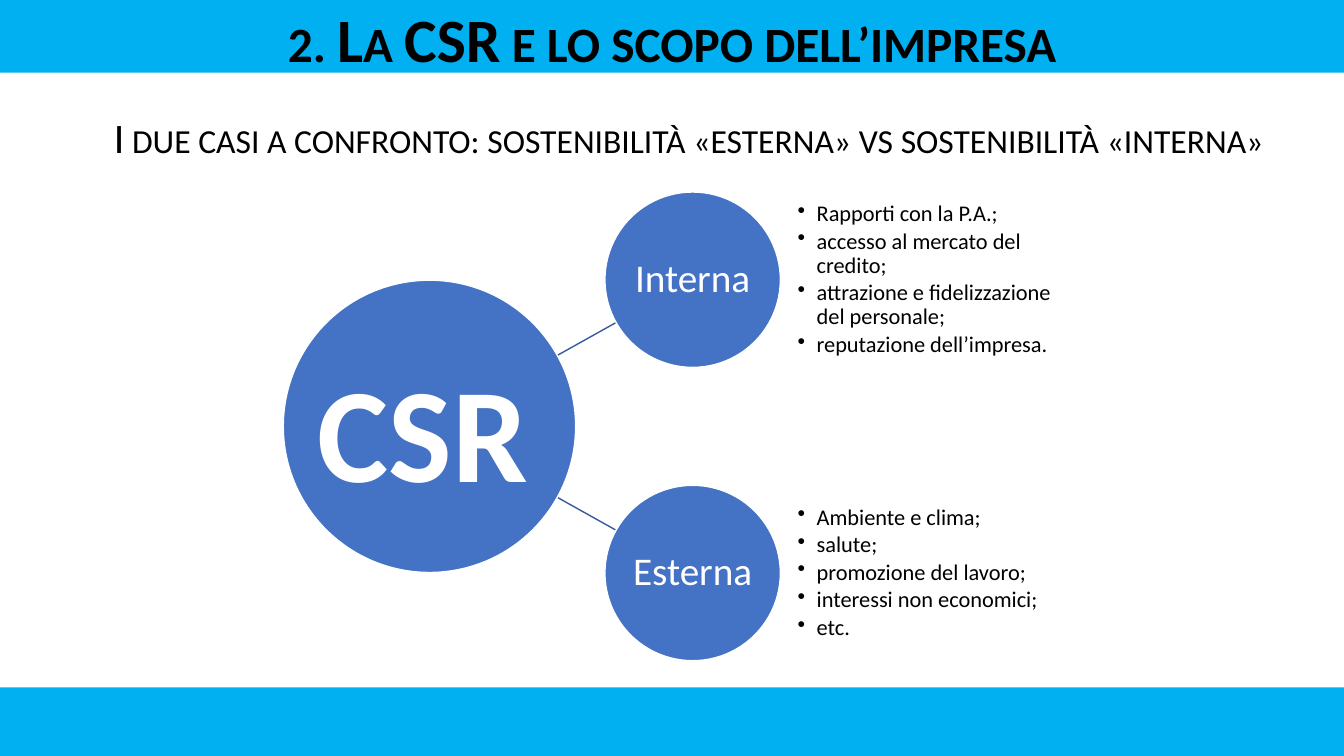
from lxml import etree
from pptx import Presentation
from pptx.dml.color import RGBColor
from pptx.enum.shapes import MSO_CONNECTOR as Connector, MSO_SHAPE as Shape
from pptx.enum.text import MSO_ANCHOR as Anchor, PP_ALIGN as Align
from pptx.oxml.ns import qn
from pptx.util import Inches, Pt

# Content
TITLE = "2. La CSR e lo scopo dell’impresa"
SUBTITLE = "I due casi a confronto: sostenibilità «esterna» vs sostenibilità «interna»"
HUB = "CSR"
BRANCHES = [
    ("Interna", -1, [
        "Rapporti con la P.A.;",
        "accesso al mercato del credito;",
        "attrazione e fidelizzazione del personale;",
        "reputazione dell’impresa.",
    ]),
    ("Esterna", 1, [
        "Ambiente e clima;",
        "salute;",
        "promozione del lavoro;",
        "interessi non economici;",
        "etc.",
    ]),
]

# Layout in inches
WIDTH, HEIGHT = 13.33, 7.5
BANDS = [(6.82, 0.68), (0, 0.72)]
HUB_X, HUB_Y, HUB_SIZE = 4.26, 4.23, 2.9
NODE_SIZE = HUB_SIZE * 0.6
NODE_X, NODE_STEP = 6.87, 1.455
LIST_LEFT, LIST_WIDTH = 7.91, NODE_SIZE * 1.5
LINK_START, LINK_END = (5.27, 0.56), (6.11, 1.03)

SKY, BLUE, LINK = "00B0F0", "4472C4", "365B9D"
WHITE, BLACK = "FFFFFF", "000000"


def color(value):
    return RGBColor.from_string(value)


def add_shape(kind, left, top, width, height, fill, line=None):
    shape = slide.shapes.add_shape(
        kind, Inches(left), Inches(top), Inches(width), Inches(height))
    shape.shadow.inherit = False
    shape.fill.solid()
    shape.fill.fore_color.rgb = color(fill)
    if line:
        shape.line.color.rgb = color(line)
        shape.line.width = Pt(1)
    else:
        shape.line.fill.background()
    return shape


def add_circle(x, y, size):
    return add_shape(Shape.OVAL, x - size / 2, y - size / 2, size, size, BLUE, WHITE)


def add_box(left, top, width, height):
    box = slide.shapes.add_textbox(
        Inches(left), Inches(top), Inches(width), Inches(height))
    box.text_frame.word_wrap = True
    return box.text_frame


def set_margins(frame, across, down):
    frame.margin_left = frame.margin_right = Inches(across)
    frame.margin_top = frame.margin_bottom = Inches(down)


def write(frame, text, size, ink, bold=False, small_caps=False, align=Align.CENTER):
    frame.text = text
    for paragraph in frame.paragraphs:
        paragraph.alignment = align
        for run in paragraph.runs:
            run.font.name = "Calibri"
            run.font.size = Pt(size)
            run.font.bold = bold
            run.font.color.rgb = color(ink)
            if small_caps:
                run.font._element.set("cap", "small")


def space(paragraph, after):
    paragraph.line_spacing = 0.9
    paragraph.space_after = Pt(after)


def add_bullet(paragraph):
    properties = paragraph._p.get_or_add_pPr()
    properties.set("marL", str(Inches(0.19)))
    properties.set("indent", str(-Inches(0.19)))
    etree.SubElement(properties, qn("a:buChar")).set("char", "•")


presentation = Presentation()
presentation.slide_width, presentation.slide_height = Inches(WIDTH), Inches(HEIGHT)
slide = presentation.slides.add_slide(presentation.slide_layouts[6])

# Bands, title and subtitle
for band_top, band_height in BANDS:
    add_shape(Shape.RECTANGLE, 0, band_top, WIDTH, band_height, SKY)
title = add_box(2.54, 0.08, 8.25, 0.59)
title.vertical_anchor = Anchor.MIDDLE
set_margins(title, 0.07, 0.04)
write(title, TITLE, 44, BLACK, bold=True, small_caps=True)
write(add_box(0.72, 1.06, 12.22, 0.61), SUBTITLE, 30, BLACK, small_caps=True)

# Links, behind the circles
for name, side, points in BRANCHES:
    (start_x, start_rise), (end_x, end_rise) = LINK_START, LINK_END
    link = slide.shapes.add_connector(
        Connector.STRAIGHT, Inches(start_x), Inches(HUB_Y + side * start_rise),
        Inches(end_x), Inches(HUB_Y + side * end_rise))
    link.line.color.rgb = color(LINK)
    link.line.width = Pt(1)
    etree.SubElement(link._element.spPr, qn("a:effectLst"))

# Hub circle
add_circle(HUB_X, HUB_Y, HUB_SIZE)

# Branch circles with their lists
for name, side, points in BRANCHES:
    node_y = HUB_Y + side * NODE_STEP
    label = add_circle(NODE_X, node_y, NODE_SIZE).text_frame
    label.vertical_anchor = Anchor.MIDDLE
    set_margins(label, 0.02, 0.02)
    write(label, name, 28, WHITE)
    space(label.paragraphs[0], 0)

    listing = add_box(LIST_LEFT, node_y - NODE_SIZE / 2, LIST_WIDTH, NODE_SIZE)
    listing.vertical_anchor = Anchor.MIDDLE
    set_margins(listing, 0, 0)
    write(listing, "\n".join(points), 16, BLACK, align=Align.LEFT)
    for paragraph in listing.paragraphs:
        space(paragraph, 2.4)
        add_bullet(paragraph)

# Hub label
hub_label = add_box(3.05, 3.4, 2.31, 1.72)
hub_label.word_wrap = False
write(hub_label, HUB, 96, WHITE, bold=True, align=Align.LEFT)

presentation.save("out.pptx")
